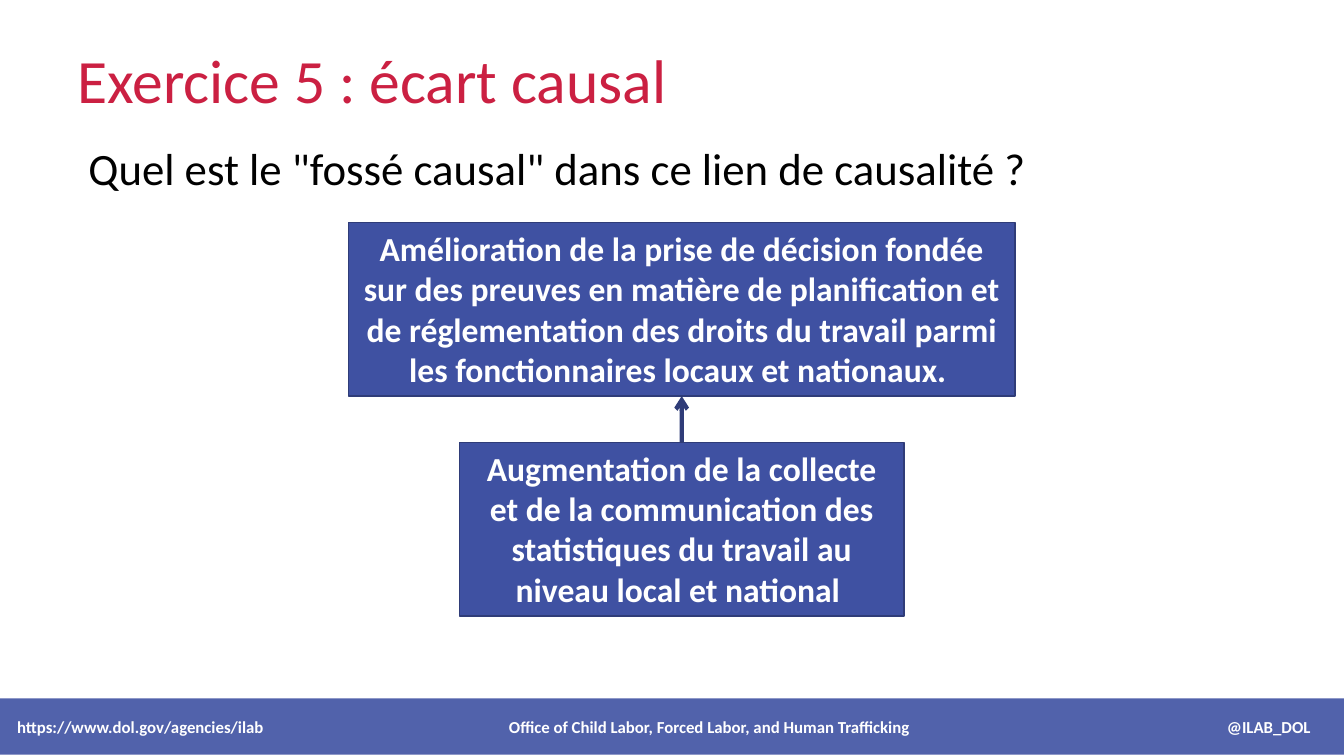
import pptx
import pptx.dml.color
import pptx.enum.shapes
import pptx.enum.text
import pptx.oxml
import pptx.oxml.ns
import pptx.util

Cm = pptx.util.Cm
Pt = pptx.util.Pt
ALIGN = pptx.enum.text.PP_ALIGN
ANCHOR = pptx.enum.text.MSO_ANCHOR

COLORS = {
    "title": "CB2042",
    "question": "000000",
    "box": "3F51A2",
    "edge": "2F3C78",
    "light": "FFFFFF",
}
SLIDE_WIDTH, SLIDE_HEIGHT = 33.87, 19.05
CHAIN_CENTER = 17.18


def rgb(name):
    """Return the named colour."""
    return pptx.dml.color.RGBColor.from_string(COLORS[name])


def add_xml(parent, tag, **attributes):
    """Append a DrawingML element to parent and return it."""
    element = pptx.oxml.parse_xml(f"<a:{tag} {pptx.oxml.ns.nsdecls('a')}/>")
    for key, value in attributes.items():
        element.set(key, str(value))
    parent.append(element)
    return element


def write_text(shape, text, size, color, bold=False, align=ALIGN.LEFT,
               anchor=ANCHOR.MIDDLE, inset=0.25, tabs=()):
    """Write one formatted paragraph into a shape."""
    frame = shape.text_frame
    frame.word_wrap = True
    frame.auto_size = pptx.enum.text.MSO_AUTO_SIZE.NONE
    frame.vertical_anchor = anchor
    frame.margin_left = frame.margin_right = Cm(inset)
    frame.margin_top = frame.margin_bottom = Cm(0.13)
    paragraph = frame.paragraphs[0]
    paragraph.add_run().text = text
    paragraph.alignment = align
    paragraph.space_before = Pt(0)
    if tabs:
        tab_list = add_xml(paragraph._p.get_or_add_pPr(), "tabLst")
        for position, kind in tabs:
            add_xml(tab_list, "tab", pos=int(Cm(position)), algn=kind)
    font = paragraph.runs[0].font
    font.name = "Calibri"
    font.size = Pt(size)
    font.bold = bold
    font.color.rgb = rgb(color)


def add_title(slide, text):
    """Place and fill the title placeholder."""
    title = slide.shapes.title
    title.left, title.top = Cm(1.7), Cm(1.19)
    title.width, title.height = Cm(23.5), Cm(1.57)
    write_text(title, text, size=44, color="title")


def add_question(slide, text):
    """Add the question below the title."""
    question = slide.shapes.add_textbox(Cm(1.98), Cm(3.07), Cm(24.33), Cm(2.31))
    write_text(question, text, size=32, color="question")


def add_rectangle(slide, left, top, width, height):
    """Add a plain filled rectangle."""
    rectangle = slide.shapes.add_shape(
        pptx.enum.shapes.MSO_SHAPE.RECTANGLE, Cm(left), Cm(top), Cm(width), Cm(height))
    rectangle.shadow.inherit = False
    rectangle.fill.solid()
    rectangle.fill.fore_color.rgb = rgb("box")
    return rectangle


def add_step(slide, text, top, width):
    """Add one centred step of the causal chain."""
    step = add_rectangle(slide, CHAIN_CENTER - width / 2, top, width, 4.37)
    step.line.color.rgb = rgb("edge")
    step.line.width = Pt(1)
    write_text(step, text, size=24, color="light", bold=True,
               align=ALIGN.CENTER, anchor=ANCHOR.TOP)
    return step


def add_causal_arrow(slide, cause, effect):
    """Join the top of the cause to the bottom of the effect."""
    arrow = slide.shapes.add_connector(
        pptx.enum.shapes.MSO_CONNECTOR.STRAIGHT, 0, 0, 0, 0)
    arrow.begin_connect(cause, 0)
    arrow.end_connect(effect, 2)
    arrow.line.color.rgb = rgb("edge")
    arrow.line.width = Pt(3)
    add_xml(arrow.line._get_or_add_ln(), "tailEnd", type="arrow")
    add_xml(arrow._element.spPr, "effectLst")


def add_footer(slide, address, office, handle):
    """Add the translucent footer bar with three tabbed texts."""
    bar = add_rectangle(slide, 0, 17.6, SLIDE_WIDTH, 1.42)
    bar.line.fill.background()
    fill_color = bar._element.spPr.find(
        f"{pptx.oxml.ns.qn('a:solidFill')}/{pptx.oxml.ns.qn('a:srgbClr')}")
    add_xml(fill_color, "alpha", val=90000)
    write_text(bar, "\t".join((address, office, handle)), size=12, color="light",
               bold=True, inset=0.43, tabs=((17.45, "ctr"), (32.6, "r")))


def main():
    """Build the exercise slide and save it."""
    presentation = pptx.Presentation()
    presentation.slide_width = Cm(SLIDE_WIDTH)
    presentation.slide_height = Cm(SLIDE_HEIGHT)
    slide = presentation.slides.add_slide(
        presentation.slide_layouts.get_by_name("Title Only"))
    add_title(slide, "Exercice 5 : écart causal")
    add_question(slide, 'Quel est le "fossé causal" dans ce lien de causalité ?')
    cause = add_step(
        slide, "Augmentation de la collecte et de la communication des "
        "statistiques du travail au niveau local et national ", top=11.15, width=11.2)
    effect = add_step(
        slide, "Amélioration de la prise de décision fondée sur des preuves en "
        "matière de planification et de réglementation des droits du travail "
        "parmi les fonctionnaires locaux et nationaux. ", top=5.61, width=16.8)
    add_causal_arrow(slide, cause, effect)
    add_footer(slide, "https://www.dol.gov/agencies/ilab",
               "Office of Child Labor, Forced Labor, and Human Trafficking", "@ILAB_DOL")
    presentation.save("out.pptx")


if __name__ == "__main__":
    main()
